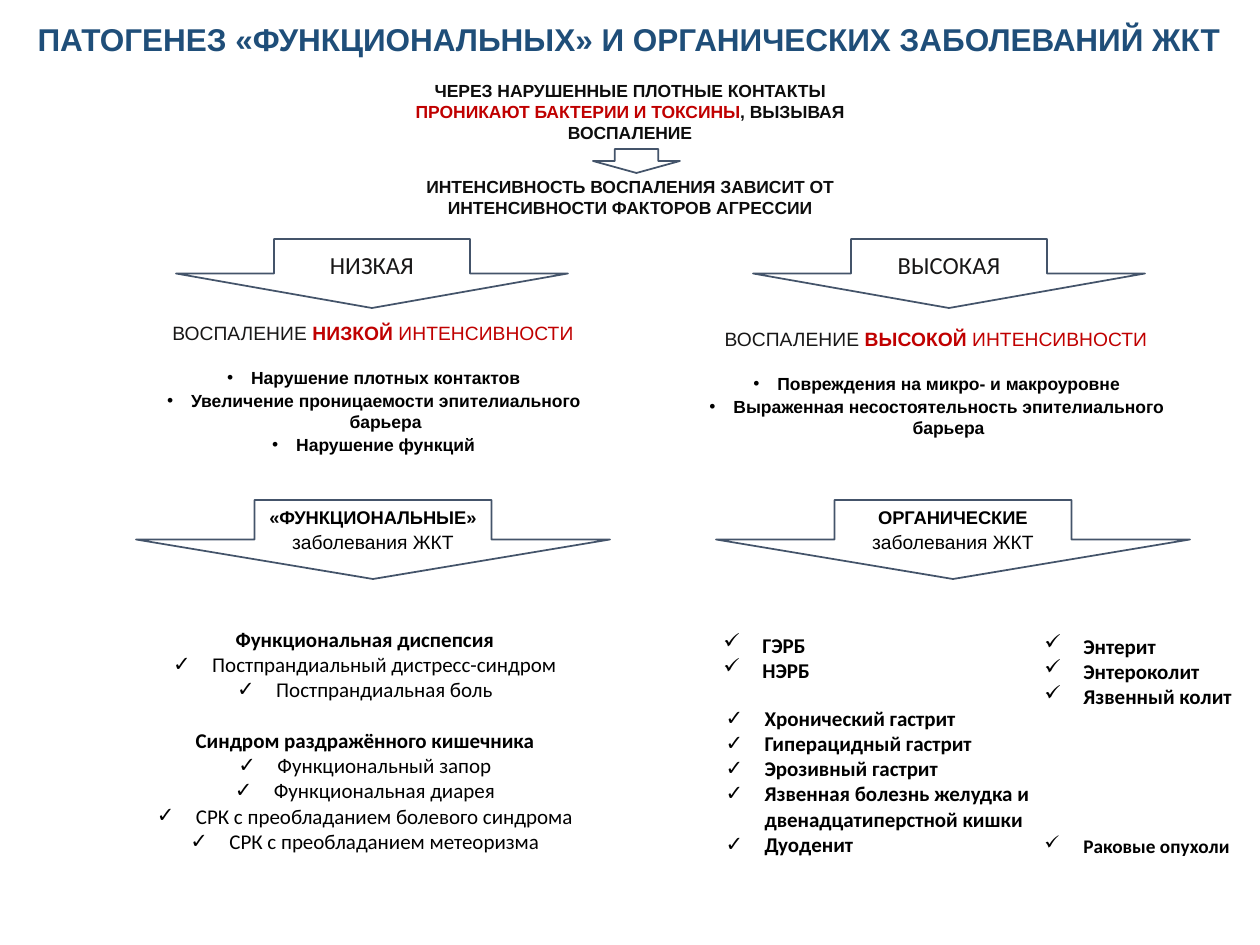
from lxml.etree import SubElement
from pptx import Presentation
from pptx.dml.color import RGBColor
from pptx.enum.shapes import MSO_SHAPE as Shape
from pptx.enum.text import MSO_ANCHOR as Anchor, MSO_AUTO_SIZE as AutoSize, PP_ALIGN as Align
from pptx.oxml.ns import qn
from pptx.util import Emu, Pt

COLORS = {"title": "1F4E79", "intro": "0D0D0D", "accent": "C00000",
          "level": "181717", "text": "000000", "outline": "44546A"}
INDENTS = {"•": (25, 24), "✓": (39, 39)}  # left margin and hanging indent


def px(length):
    return Emu(round(length * 914400 / 126))


def rgb(name):
    return RGBColor.from_string(COLORS[name])


def add_line(frame, runs, font="Arial", size=10, color="text", bold=False,
             align=Align.CENTER, mark=None, before=0):
    """Add a paragraph; runs is a string or a list of (text, bold, color)."""
    first = frame.paragraphs[0]
    paragraph = frame.add_paragraph() if first.runs else first
    paragraph.alignment = align
    paragraph.space_before = Pt(before)
    properties = paragraph._p.get_or_add_pPr()
    margin, hanging = INDENTS.get(mark, (0, 0))
    properties.set("marL", str(px(margin)))
    properties.set("indent", str(-px(hanging)))
    if mark:
        SubElement(properties, qn("a:buChar"), char=mark)
    else:
        SubElement(properties, qn("a:buNone"))
    paragraph.font.name = font
    paragraph.font.size = Pt(size)
    if isinstance(runs, str):
        paragraph.font.bold = bold
        paragraph.font.color.rgb = rgb(color)
        paragraph.add_run().text = runs
        return
    for text, run_bold, run_color in runs:
        run = paragraph.add_run()
        run.text = text
        run.font.bold = run_bold
        run.font.color.rgb = rgb(run_color)


def place(shape, box, wrap=True):
    """Move a text shape to its box and return its top-anchored frame."""
    shape.left, shape.top, shape.width, shape.height = map(px, box)
    frame = shape.text_frame
    frame.auto_size = AutoSize.NONE
    frame.word_wrap = wrap
    frame.vertical_anchor = Anchor.TOP
    return frame


def add_text(slide, box, wrap=True):
    return place(slide.shapes.add_textbox(0, 0, 0, 0), box, wrap)


def add_arrow(slide, box):
    arrow = slide.shapes.add_shape(Shape.DOWN_ARROW, *map(px, box))
    arrow.shadow.inherit = False
    arrow.fill.background()
    arrow.line.color.rgb = rgb("outline")
    arrow.line.width = Pt(1)
    arrow.text_frame.vertical_anchor = Anchor.MIDDLE
    return arrow.text_frame


def add_title(placeholder, box):
    frame = place(placeholder, box, wrap=False)
    add_line(frame, "ПАТОГЕНЕЗ «ФУНКЦИОНАЛЬНЫХ» И ОРГАНИЧЕСКИХ ЗАБОЛЕВАНИЙ ЖКТ",
             size=18, color="title", bold=True, align=Align.LEFT)


def add_intro(slide, left, top, width):
    add_line(add_text(slide, (left, top, width, 77)),
             [("ЧЕРЕЗ НАРУШЕННЫЕ ПЛОТНЫЕ КОНТАКТЫ ", True, "intro"),
              ("ПРОНИКАЮТ БАКТЕРИИ И ТОКСИНЫ", True, "accent"),
              (", ВЫЗЫВАЯ ВОСПАЛЕНИЕ", True, "intro")])
    add_arrow(slide, (left + 213, top + 75, 87, 24))
    add_line(add_text(slide, (left + 12, top + 96, width - 24, 55)),
             "ИНТЕНСИВНОСТЬ ВОСПАЛЕНИЯ ЗАВИСИТ ОТ ИНТЕНСИВНОСТИ ФАКТОРОВ АГРЕССИИ",
             color="intro", bold=True)


def add_branch(slide, left, top, level, level_offset, diseases):
    """Place the intensity arrow and, below it, the disease arrow."""
    frame = add_arrow(slide, (left + level_offset, top, 392, 69))
    add_line(frame, level, "Calibri", 14, "level")
    frame = add_arrow(slide, (left, top + 261, 474, 79))
    add_line(frame, diseases, size=10.5, bold=True, before=0.9)
    add_line(frame, "заболевания ЖКТ", size=11, before=0.9)


def add_causes(placeholder, box, level, causes):
    frame = place(placeholder, box)
    frame.margin_left = frame.margin_right = frame.margin_bottom = 0
    frame.margin_top = px(1)
    add_line(frame, [("ВОСПАЛЕНИЕ ", False, "level"), (level + " ", True, "accent"),
                     ("ИНТЕНСИВНОСТИ", False, "accent")], size=11, before=0.9)
    for index, cause in enumerate(causes):
        add_line(frame, cause, bold=True, mark="•", before=0.9 if index else 13.3)


def add_functional_list(placeholder, box, groups):
    frame = place(placeholder, box)
    for index, (heading, items) in enumerate(groups.items()):
        add_line(frame, heading, "Calibri", 12, bold=True, before=14.6 if index else 0)
        for item in items:
            add_line(frame, item, "Calibri", 12, mark="✓")


def add_checklist(frame, items, size=12):
    for item in items:
        add_line(frame, item, "Calibri", size, bold=True, align=Align.LEFT, mark="✓")


def add_organic_lists(slide, placeholder, left, top):
    add_checklist(add_text(slide, (left, top, 377, 74)), ["ГЭРБ", "НЭРБ"])
    add_checklist(place(placeholder, (left + 2, top + 73, 377, 165)),
                  ["Хронический гастрит", "Гиперацидный гастрит", "Эрозивный гастрит",
                   "Язвенная болезнь желудка и двенадцатиперстной кишки", "Дуоденит"])
    add_checklist(add_text(slide, (left + 321, top + 1, 228, 89)),
                  ["Энтерит", "Энтероколит", "Язвенный колит"])
    add_checklist(add_text(slide, (left + 321, top + 202, 213, 37), wrap=False),
                  ["Раковые опухоли"], size=11)


def main():
    presentation = Presentation()
    presentation.slide_width, presentation.slide_height = px(1260), px(945)
    slide = presentation.slides.add_slide(presentation.slide_layouts.get_by_name("Comparison"))
    title, low_causes, functional, high_causes, organic = list(slide.placeholders)

    add_title(title, (25, 14, 1221, 50))
    add_intro(slide, 380, 74, 500)
    add_branch(slide, 136, 239, "НИЗКАЯ", 40, "«ФУНКЦИОНАЛЬНЫЕ»")
    add_branch(slide, 716, 239, "ВЫСОКАЯ", 37, "ОРГАНИЧЕСКИЕ")
    add_causes(low_causes, (136, 320, 474, 161), "НИЗКОЙ",
               ["Нарушение плотных контактов",
                "Увеличение проницаемости эпителиального барьера",
                "Нарушение функций"])
    add_causes(high_causes, (684, 326, 504, 115), "ВЫСОКОЙ",
               ["Повреждения на микро- и макроуровне",
                "Выраженная несостоятельность эпителиального барьера"])
    add_functional_list(functional, (50, 620, 630, 242), {
        "Функциональная диспепсия": [
            "Постпрандиальный дистресс-синдром", "Постпрандиальная боль"],
        "Синдром раздражённого кишечника": [
            "Функциональный запор", "Функциональная диарея",
            "СРК с преобладанием болевого синдрома",
            "СРК с преобладанием метеоризма"]})
    add_organic_lists(slide, organic, 711, 626)
    presentation.save("out.pptx")


if __name__ == "__main__":
    main()
